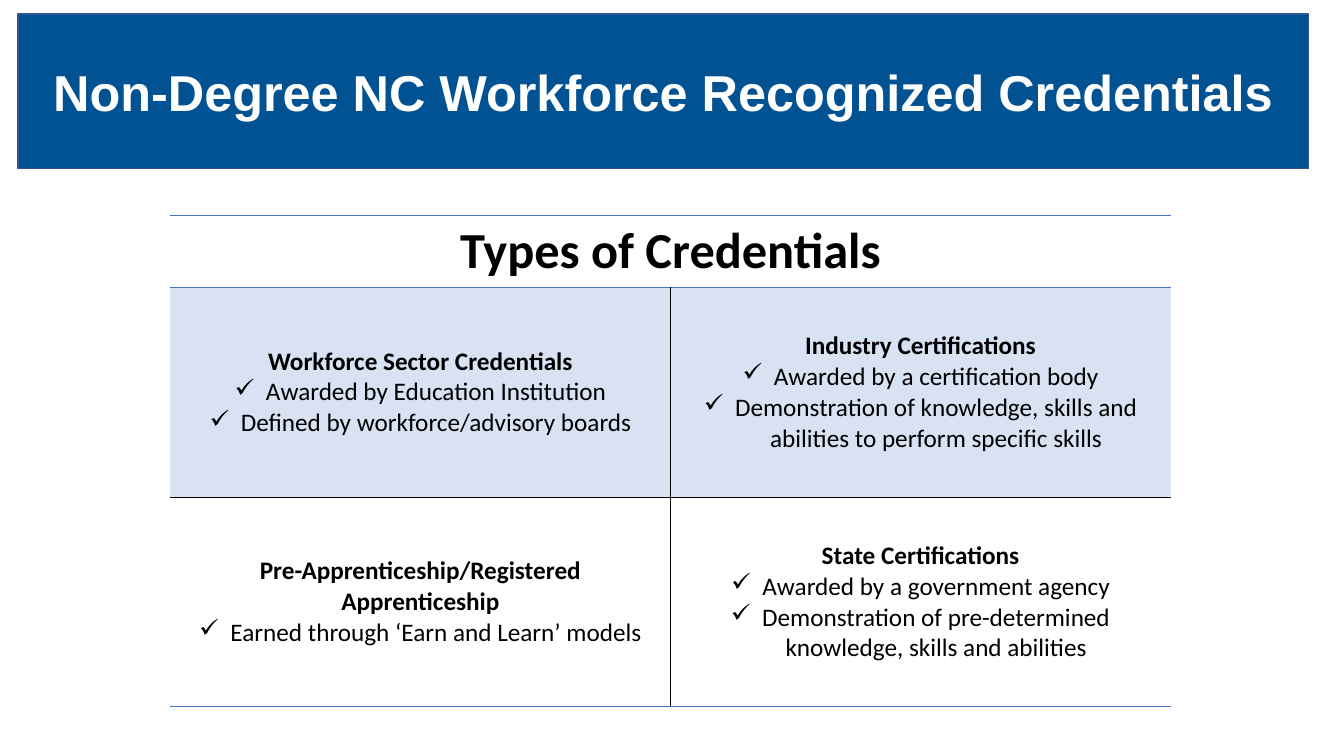
import dataclasses

import pptx
import pptx.dml.color
import pptx.enum.text
import pptx.oxml
import pptx.oxml.ns
import pptx.table
import pptx.text.text
import pptx.util

Inches = pptx.util.Inches
Pt = pptx.util.Pt
COLORS = {"banner": "005293", "banner_line": "325491", "accent": "4472C4",
          "black": "000000", "white": "FFFFFF"}
TITLE_FONT = {"name": "Arial", "size": Pt(36), "bold": True}
HEADER_FONT = {"name": "Calibri", "size": Pt(36), "bold": True}
NAME_FONT = {"name": "Calibri", "size": Pt(18), "bold": True}
POINT_FONT = {"name": "Calibri", "size": Pt(18), "bold": False}
BULLET_INDENT = Inches(0.31)
CENTER = pptx.enum.text.PP_ALIGN.CENTER
MIDDLE = pptx.enum.text.MSO_ANCHOR.MIDDLE


@dataclasses.dataclass
class Credential:
    name: str
    points: list[str]


CREDENTIALS = [
    [Credential("Workforce Sector Credentials",
                ["Awarded by Education Institution",
                 "Defined by workforce/advisory boards"]),
     Credential("Industry Certifications",
                ["Awarded by a certification body",
                 "Demonstration of knowledge, skills and abilities to perform specific skills"])],
    [Credential("Pre-Apprenticeship/Registered Apprenticeship",
                ["Earned through ‘Earn and Learn’ models"]),
     Credential("State Certifications",
                ["Awarded by a government agency",
                 "Demonstration of pre-determined knowledge, skills and abilities"])],
]


def rgb(name: str) -> pptx.dml.color.RGBColor:
    return pptx.dml.color.RGBColor.from_string(COLORS[name])


def add_xml(parent, xml: str) -> None:
    parent.append(pptx.oxml.parse_xml(xml.replace(" ", f" {pptx.oxml.ns.nsdecls('a')} ", 1)))


def write(p: pptx.text.text._Paragraph, text: str, font: dict, color: str) -> None:
    p.alignment = CENTER
    p.line_spacing = 1.0
    r = p.add_run()
    r.text = text
    for key, value in font.items():
        setattr(r.font, key, value)
    r.font.color.rgb = rgb(color)


def add_bullet(p: pptx.text.text._Paragraph) -> None:
    pPr = p._p.get_or_add_pPr()
    pPr.set("marL", str(BULLET_INDENT))
    pPr.set("indent", str(-BULLET_INDENT))
    add_xml(pPr, '<a:buChar char="✓"/>')


def set_borders(cell: pptx.table._Cell, borders: dict[str, str]) -> None:
    """Draw the given sides (L, R, T, B) in 1 pt and hide the others."""
    tcPr = cell._tc.get_or_add_tcPr()
    for side in "LRTB":
        fill = "<a:noFill/>"
        if side in borders:
            fill = f'<a:solidFill><a:srgbClr val="{COLORS[borders[side]]}"/></a:solidFill>'
        add_xml(tcPr, f'<a:ln{side} w="{Pt(1)}">{fill}</a:ln{side}>')


def fill_credential(cell: pptx.table._Cell, credential: Credential) -> None:
    tf = cell.text_frame
    write(tf.paragraphs[0], credential.name, NAME_FONT, "black")
    for point in credential.points:
        p = tf.add_paragraph()
        write(p, point, POINT_FONT, "black")
        add_bullet(p)


def add_banner(s) -> None:
    sp = s.shapes.title
    sp.left, sp.top, sp.width, sp.height = map(Inches, (0.18, 0.14, 12.8, 1.53))
    sp.fill.solid()
    sp.fill.fore_color.rgb = rgb("banner")
    sp.line.color.rgb = rgb("banner_line")
    sp.line.width = Pt(1)
    tf = sp.text_frame
    tf.word_wrap = True
    tf.auto_size = pptx.enum.text.MSO_AUTO_SIZE.NONE
    tf.vertical_anchor = MIDDLE
    write(tf.paragraphs[0], "Non-Degree NC Workforce Recognized Credentials", TITLE_FONT, "white")


def add_credentials_table(s) -> None:
    frame = s.shapes.add_table(3, 2, *map(Inches, (1.69, 2.14, 9.92, 4.86)))
    table = frame.table
    table.first_row = table.horz_banding = False
    for row, height in zip(table.rows, (0.7, 2.08, 2.08)):
        row.height = Inches(height)

    # Borders and fills follow from the place in the grid
    row_lines = ["accent", "accent", "black", "accent"]
    for i in range(3):
        for j in range(2):
            cell = table.cell(i, j)
            cell.vertical_anchor = MIDDLE
            borders = {"T": row_lines[i], "B": row_lines[i + 1]}
            if i > 0:
                borders["LR"[1 - j]] = "black"
            set_borders(cell, borders)
            if i == 1:
                cell.fill.solid()
                cell.fill.fore_color.rgb = rgb("accent")
                color = cell._tc.tcPr.find(pptx.oxml.ns.qn("a:solidFill"))[0]
                add_xml(color, '<a:alpha val="20000"/>')
            else:
                cell.fill.background()
            if i > 0:
                fill_credential(cell, CREDENTIALS[i - 1][j])

    # Header across both columns
    header = table.cell(0, 0)
    header.merge(table.cell(0, 1))
    write(header.text_frame.paragraphs[0], "Types of Credentials", HEADER_FONT, "black")


def main() -> None:
    prs = pptx.Presentation()
    prs.slide_width, prs.slide_height = Inches(13.33), Inches(7.5)
    s = prs.slides.add_slide(prs.slide_layouts[5])
    add_banner(s)
    add_credentials_table(s)
    prs.save("out.pptx")


if __name__ == "__main__":
    main()
